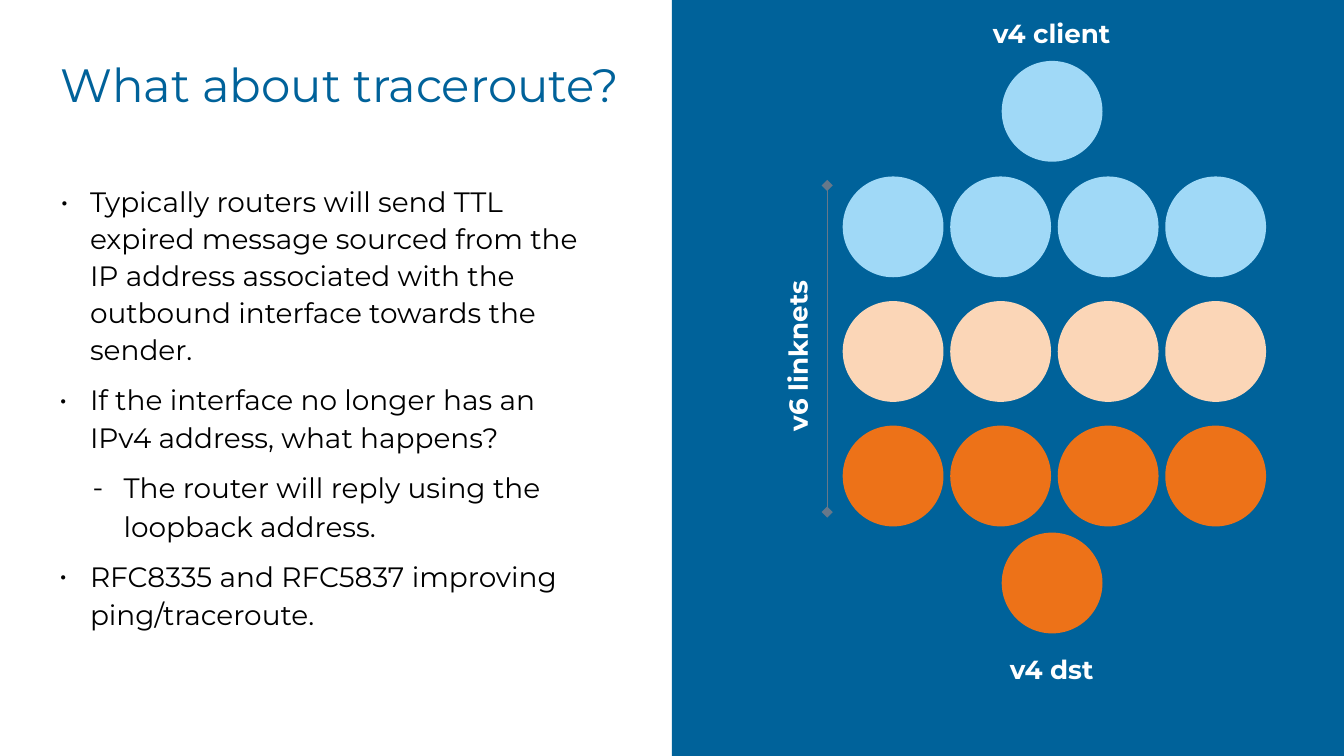
from pptx import Presentation
from pptx.dml.color import RGBColor
from pptx.enum.shapes import MSO_CONNECTOR, MSO_SHAPE
from pptx.enum.text import MSO_ANCHOR, MSO_AUTO_SIZE, PP_ALIGN
from pptx.oxml.ns import qn
from pptx.util import Inches, Pt
from lxml import etree

RECTANGLE, OVAL = MSO_SHAPE.RECTANGLE, MSO_SHAPE.OVAL
STRAIGHT = MSO_CONNECTOR.STRAIGHT
TOP, NO_FIT = MSO_ANCHOR.TOP, MSO_AUTO_SIZE.NONE
LEFT, CENTER = PP_ALIGN.LEFT, PP_ALIGN.CENTER

BLUE = RGBColor(0x00, 0x62, 0x9A)
SKY = RGBColor(0xA0, 0xD9, 0xF7)
PEACH = RGBColor(0xFB, 0xD6, 0xB7)
ORANGE = RGBColor(0xED, 0x72, 0x18)
GRAY = RGBColor(0x67, 0x78, 0x8A)
WHITE = RGBColor(0xFF, 0xFF, 0xFF)
BLACK = RGBColor(0x00, 0x00, 0x00)

# The grid has 100 columns and 56.25 rows, each a tenth of an inch
CELL = Inches(0.1)
COLUMNS, ROWS = 100, 56.25
CIRCLE = 7.5


def cells(*counts):
    return [round(count * CELL) for count in counts]


class SlideBuilder:
    font = "Montserrat"

    def __init__(self, deck):
        self.page = deck.slides.add_slide(deck.slide_layouts[5])

    def prepare_frame(self, box, inset=0):
        frame = box.text_frame
        frame.word_wrap = True
        frame.auto_size = NO_FIT
        frame.vertical_anchor = TOP
        frame.margin_left = frame.margin_right = Inches(inset)
        frame.margin_top = frame.margin_bottom = Inches(inset)
        return frame

    def add_span(self, para, text, size, color, bold=False):
        span = para.add_run()
        span.text = text
        span.font.name = self.font
        span.font.size = Pt(size)
        span.font.bold = bold
        span.font.color.rgb = color

    def title(self, text, area):
        box = self.page.shapes.title
        box.left, box.top, box.width, box.height = cells(*area)
        para = self.prepare_frame(box).paragraphs[0]
        para.alignment = LEFT
        para.line_spacing = 1.1
        self.add_span(para, text, 25, BLUE)

    def bullets(self, items, area):
        frame = self.prepare_frame(self.page.shapes.add_textbox(*cells(*area)))
        for index, (text, level, hang, spacing) in enumerate(items):
            para = frame.add_paragraph() if index else frame.paragraphs[0]
            para.level = level
            para.line_spacing = spacing
            para.space_before = Pt(6)
            self.add_span(para, text, 15, BLACK)
            properties = para._p.get_or_add_pPr()
            properties.set("marL", str(Inches(0.25 * (level + 1))))
            properties.set("indent", str(-Inches(hang)))
            typeface = etree.SubElement(properties, qn("a:buFont"))
            typeface.set("typeface", self.font)
            bullet = etree.SubElement(properties, qn("a:buChar"))
            bullet.set("char", "-" if level else "•")

    def label(self, text, area, alignment=CENTER, rotation=0):
        box = self.page.shapes.add_textbox(*cells(*area))
        box.rotation = rotation
        para = self.prepare_frame(box, 0.1).paragraphs[0]
        para.alignment = alignment
        self.add_span(para, text, 14, WHITE, bold=True)

    def shape(self, kind, area, color):
        shape = self.page.shapes.add_shape(kind, *cells(*area))
        shape.shadow.inherit = False
        shape.fill.solid()
        shape.fill.fore_color.rgb = color
        shape.line.fill.background()

    def circle(self, column, row, color):
        self.shape(OVAL, (column, row, CIRCLE, CIRCLE), color)

    def span_line(self, column, first_row, last_row):
        line = self.page.shapes.add_connector(
            STRAIGHT, *cells(column, first_row, column, last_row))
        line.line.color.rgb = GRAY
        line.line.width = Pt(0.75)
        outline = line.line._get_or_add_ln()
        for end in ("a:headEnd", "a:tailEnd"):
            etree.SubElement(outline, qn(end)).set("type", "diamond")
        etree.SubElement(line._element.spPr, qn("a:effectLst"))


def main():
    deck = Presentation()
    deck.slide_width, deck.slide_height = cells(COLUMNS, ROWS)
    slide = SlideBuilder(deck)

    # Left half: title and bullets
    slide.title("What about traceroute?", (4.5, 3.75, 43.3, 7.3))
    slide.bullets([
        ("Typically routers will send TTL expired message sourced from the IP "
         "address associated with the outbound interface towards the sender.",
         0, 0.22, 1.1),
        ("If the interface no longer has an IPv4 address, what happens?",
         0, 0.23, 1.15),
        ("The router will reply using the loopback address.", 1, 0.23, 1.15),
        ("RFC8335 and RFC5837 improving ping/traceroute.", 0, 0.23, 1.15),
    ], (4.2, 13.5, 39.6, 38.6))

    # Right half: panel with the grid of routers
    slide.shape(RECTANGLE, (COLUMNS / 2, 0, COLUMNS / 2, ROWS), BLUE)
    for row, color in enumerate((SKY, PEACH, ORANGE)):
        for column in range(4):
            slide.circle(62.7 + 8 * column, 13.13 + 9.27 * row, color)

    # Extent of the v6 link networks
    slide.span_line(61.55, 13.8, 38.1)
    slide.label("v6 linknets", (52.4, 23.95, 13.9, 4.4), LEFT, 269.8)

    # Endpoints above and below the grid
    for text, label_row, circle_row, color in (
            ("v4 client", 0.3, 4.53, SKY), ("v4 dst", 47.65, 39.63, ORANGE)):
        slide.circle(74.53, circle_row, color)
        slide.label(text, (71.05, label_row, 14.4, 4.4))

    deck.save("out.pptx")


if __name__ == "__main__":
    main()
